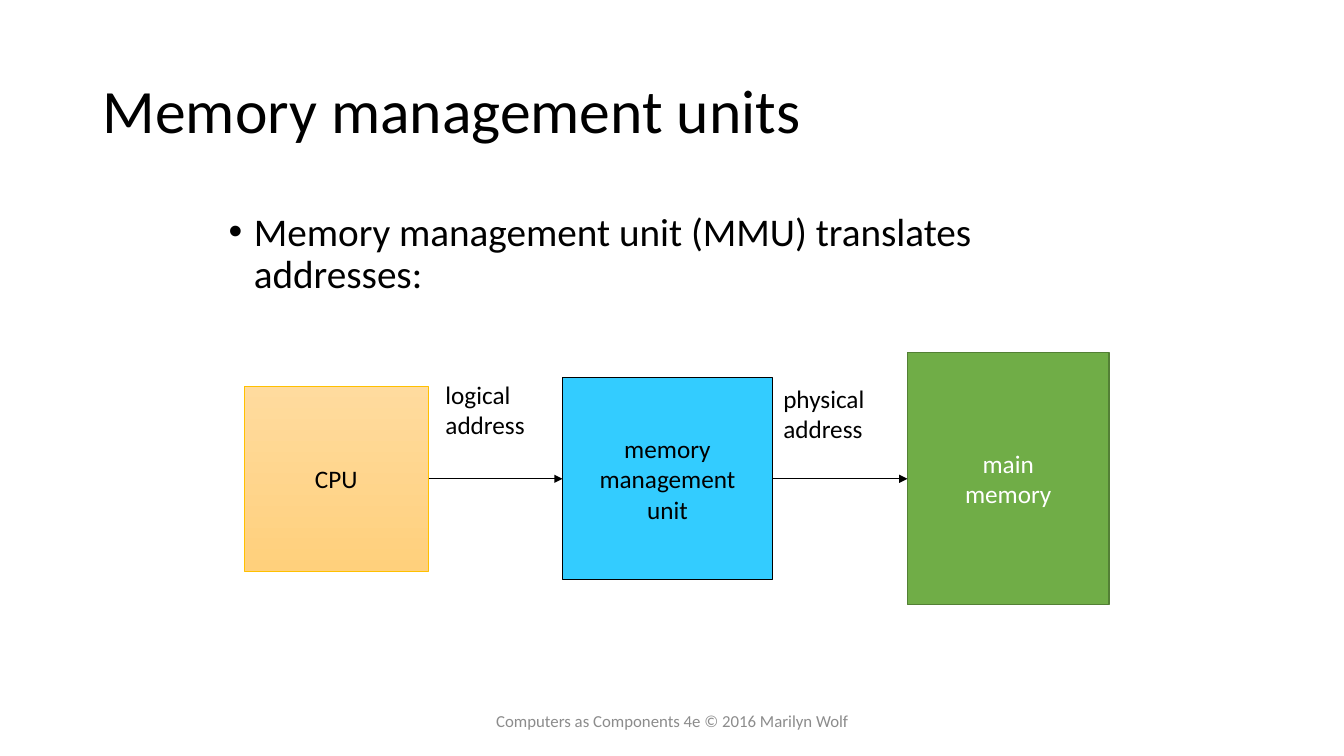
"""Build the slide on memory management units with its address translation diagram."""
from lxml.etree import SubElement
from pptx import Presentation
from pptx.dml.color import RGBColor
from pptx.enum.shapes import MSO_CONNECTOR, MSO_SHAPE
from pptx.enum.text import MSO_ANCHOR, PP_ALIGN
from pptx.oxml.ns import qn
from pptx.util import Inches, Pt

BLACK = RGBColor(0x00, 0x00, 0x00)
WHITE = RGBColor(0xFF, 0xFF, 0xFF)
GRAY = RGBColor(0x8C, 0x8C, 0x8C)
AMBER = RGBColor(0xFF, 0xC0, 0x00)
PALE_ORANGE = RGBColor(0xFF, 0xDB, 0x9E)
ORANGE = RGBColor(0xFF, 0xD0, 0x7C)
SKY_BLUE = RGBColor(0x33, 0xCC, 0xFF)
GREEN = RGBColor(0x70, 0xAD, 0x47)
DARK_GREEN = RGBColor(0x53, 0x80, 0x35)
AXIS = 4.75


def write(shape, lines, size, color=BLACK, align=PP_ALIGN.LEFT, anchor=MSO_ANCHOR.TOP, wrap=True):
    """Fill a shape with one paragraph per line and return the first one."""
    frame = shape.text_frame
    frame.word_wrap = wrap
    frame.vertical_anchor = anchor
    for index, line in enumerate(lines):
        paragraph = frame.add_paragraph() if index else frame.paragraphs[0]
        paragraph.alignment = align
        run = paragraph.add_run()
        run.text = line
        run.font.name = "Calibri"
        run.font.size = Pt(size)
        run.font.color.rgb = color
    return frame.paragraphs[0]


def add_text_box(left, top, width, height):
    """Add an empty text box measured in inches."""
    return slide.shapes.add_textbox(Inches(left), Inches(top), Inches(width), Inches(height))


presentation = Presentation()
presentation.slide_width = Inches(13.33)
presentation.slide_height = Inches(7.5)
slide = presentation.slides.add_slide(presentation.slide_layouts[6])

title = write(add_text_box(0.92, 0.4, 11.5, 1.45), ["Memory management units"], 44,
              anchor=MSO_ANCHOR.MIDDLE)
title.line_spacing = 0.9

bullet = write(add_text_box(2.17, 2.06, 8.94, 1.19),
               ["Memory management unit (MMU) translates addresses:"], 28)
bullet.line_spacing = 0.9
bullet.space_before = Pt(10)
properties = bullet._p.get_or_add_pPr()
properties.set("marL", str(Inches(0.25)))
properties.set("indent", str(-Inches(0.25)))
SubElement(properties, qn("a:buFont")).set("typeface", "Arial")
SubElement(properties, qn("a:buChar")).set("char", "•")

units = [
    (["CPU"], 2.42, 1.83, 1.83, None, AMBER, 0.5, BLACK),
    (["memory", "management", "unit"], 5.58, 2.08, 2, SKY_BLUE, BLACK, 0.75, BLACK),
    (["main", "memory"], 9, 2, 2.5, GREEN, DARK_GREEN, 1, WHITE),
]
boxes = []
for lines, left, width, height, fill, outline, weight, color in units:
    box = slide.shapes.add_shape(MSO_SHAPE.RECTANGLE, Inches(left), Inches(AXIS - height / 2),
                                 Inches(width), Inches(height))
    box.shadow.inherit = False
    if fill is None:
        box.fill.gradient()
        box.fill.gradient_angle = 270
        for stop, shade in zip(box.fill.gradient_stops, (PALE_ORANGE, ORANGE)):
            stop.color.rgb = shade
    else:
        box.fill.solid()
        box.fill.fore_color.rgb = fill
    box.line.color.rgb = outline
    box.line.width = Pt(weight)
    write(box, lines, 18, color, PP_ALIGN.CENTER, MSO_ANCHOR.MIDDLE, wrap=False)
    boxes.append(box)

for source, target in zip(boxes, boxes[1:]):
    arrow = slide.shapes.add_connector(MSO_CONNECTOR.STRAIGHT, 0, 0, 0, 0)
    arrow.begin_connect(source, 3)
    arrow.end_connect(target, 1)
    arrow.line.color.rgb = BLACK
    arrow.line.width = Pt(0.75)
    SubElement(arrow.line._get_or_add_ln(), qn("a:tailEnd")).set("type", "triangle")
    SubElement(arrow._element.spPr, qn("a:effectLst"))

for kind, left, top, width in [("logical", 4.32, 3.71, 1), ("physical", 7.67, 3.75, 1.02)]:
    write(add_text_box(left, top, width, 0.71), [kind, "address"], 18, wrap=False)

write(add_text_box(4.42, 6.95, 4.5, 0.4), ["Computers as Components 4e © 2016 Marilyn Wolf"], 12,
      GRAY, PP_ALIGN.CENTER, MSO_ANCHOR.MIDDLE)

presentation.save("out.pptx")
